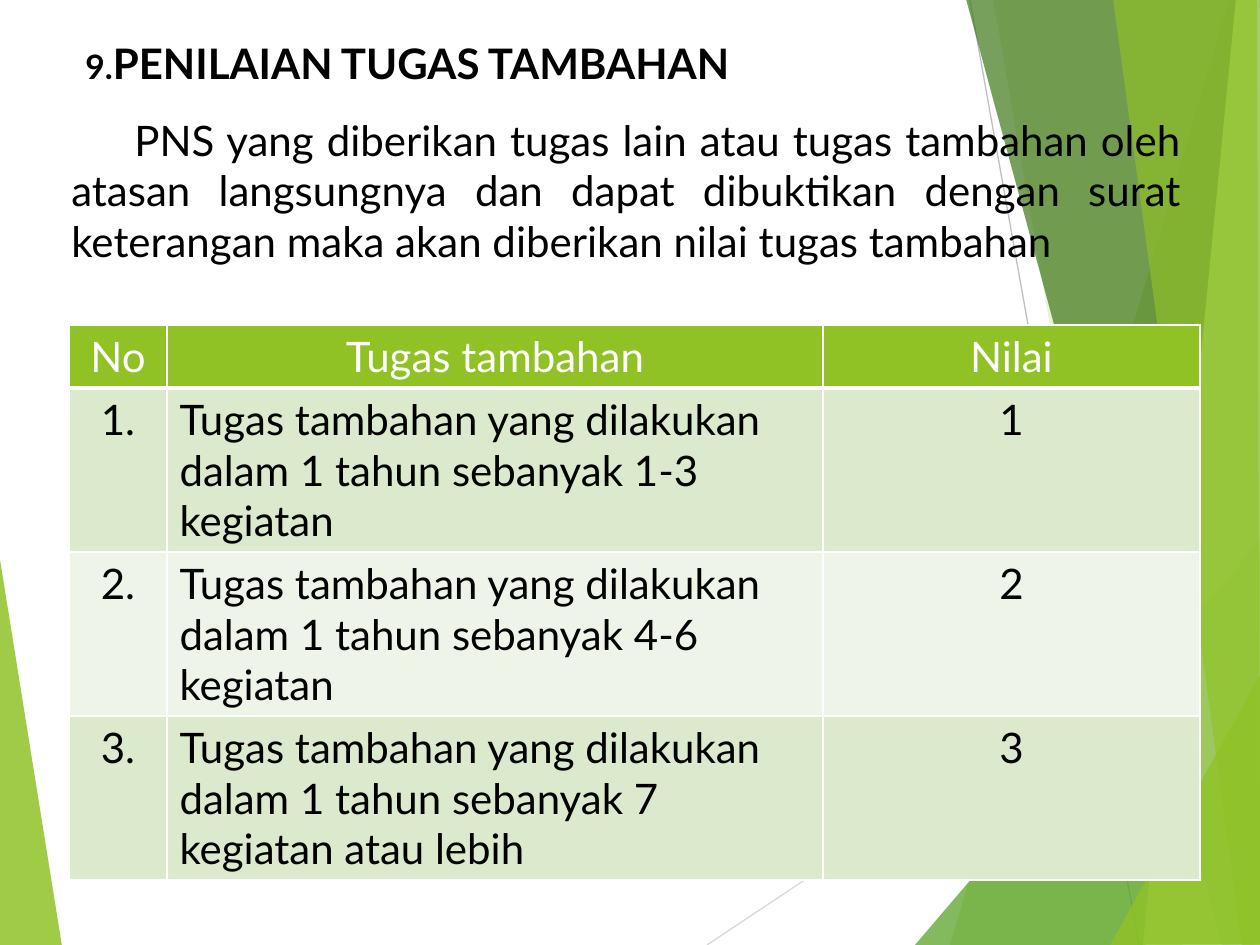
from lxml import etree
from pptx import Presentation, util as u
from pptx.dml.color import RGBColor
from pptx.enum import shapes, text
from pptx.oxml.ns import qn

PX = 914400 / 126  # EMU in one px
FONT = "Lato"


def px(length):
    return u.Emu(round(length * PX))


def paint(color_format, color, alpha=100):
    """Set a colour from a hex string, with opacity in percent."""
    color_format.rgb = RGBColor.from_string(color)
    if alpha < 100:
        node = color_format._xFill.find(qn("a:srgbClr"))
        etree.SubElement(node, qn("a:alpha")).set("val", str(alpha * 1000))


deck = Presentation()
deck.slide_width, deck.slide_height = px(1260), px(945)
page = deck.slides.add_slide(deck.slide_layouts[6])

# Background: thin lines behind the facets
for x1, y1, x2, y2, color in [
    (707, 945, 1261, 576, "D9D9D9"),
    (970, 0, 1139, 945, "BFBFBF"),
]:
    line = page.shapes.add_connector(
        shapes.MSO_CONNECTOR.STRAIGHT, px(x1), px(y1), px(x2), px(y2))
    line.line.width = u.Pt(0.75)
    paint(line.line.color, color)
    etree.SubElement(line._element.spPr, qn("a:effectLst"))

# Background: translucent green facets
facets = [
    ("90C226", 85, [(-1, 553), (62, 946), (-1, 945)]),
    ("90C226", 30, [(1229, 0), (950, 945), (1262, 946), (1261, 1)]),
    ("90C226", 20, [(993, -1), (1158, 945), (1261, 945), (1261, -1)]),
    ("54A021", 72, [(915, 945), (1260, 541), (1261, 945)]),
    ("3F7819", 70, [(966, -1), (1222, 945), (1261, 944), (1261, -1)]),
    ("C0E474", 70, [(1236, -1), (1143, 945), (1261, 945), (1260, -1)]),
    ("90C226", 65, [(1113, -1), (1242, 945), (1260, 945), (1257, -1)]),
    ("90C226", 80, [(1110, 945), (1261, 674), (1261, 944)]),
]
for color, alpha, points in facets:
    builder = page.shapes.build_freeform(*points[0], scale=PX)
    builder.add_line_segments(points[1:], close=True)
    facet = builder.convert_to_shape()
    facet.shadow.inherit = False
    facet.line.fill.background()
    facet.fill.solid()
    paint(facet.fill.fore_color, color, alpha)

# Title and introduction
paragraphs = []
for left, top, width, height, words in [
    (73, 31, 1155, 87, "9.PENILAIAN TUGAS TAMBAHAN"),
    (59, 108, 1134, 231,
     "\tPNS yang diberikan tugas lain atau tugas tambahan oleh atasan "
     "langsungnya dan dapat dibuktikan dengan surat keterangan maka akan "
     "diberikan nilai tugas tambahan"),
]:
    box = page.shapes.add_textbox(px(left), px(top), px(width), px(height))
    box.text_frame.word_wrap = True
    box.text_frame.text = words
    para = box.text_frame.paragraphs[0]
    span = para.runs[0]
    span.font.name, span.font.size = FONT, u.Pt(24)
    paint(span.font.color, "000000")
    paragraphs.append(para)

title, intro = paragraphs
title.runs[0].font.bold = True
title.runs[0].font._element.set("cap", "small")
intro.alignment = text.PP_ALIGN.JUSTIFY
intro.space_before = u.Pt(6)

# Table of marks
task = "Tugas tambahan yang dilakukan dalam 1 tahun sebanyak "
rows = [
    ("No", "Tugas tambahan", "Nilai"),
    ("1.", task + "1-3 kegiatan", "1"),
    ("2.", task + "4-6 kegiatan", "2"),
    ("3.", task + "7 kegiatan atau lebih", "3"),
]
widths, heights = [98, 656, 377], [63, 164, 164, 164]
table = page.shapes.add_table(
    len(rows), len(widths), px(69), px(325), px(sum(widths)), px(sum(heights))).table
for column, width in zip(table.columns, widths):
    column.width = px(width)
for row, height in zip(table.rows, heights):
    row.height = px(height)

for r, words in enumerate(rows):
    for c, word in enumerate(words):
        cell = table.cell(r, c)
        cell.text_frame.text = word
        para = cell.text_frame.paragraphs[0]
        centred = r == 0 or c != 1
        para.alignment = text.PP_ALIGN.CENTER if centred else text.PP_ALIGN.LEFT
        font = para.runs[0].font
        font.name, font.size, font.bold = FONT, u.Pt(24), False
        paint(font.color, "000000" if r else "FFFFFF")

        # White borders come before the fill in the cell properties
        properties = cell._tc.get_or_add_tcPr()
        for side in ("lnL", "lnR", "lnT", "lnB"):
            thick = (r, side) in [(0, "lnB"), (1, "lnT")]
            border = etree.SubElement(
                properties, qn("a:" + side), w=str(u.Pt(3 if thick else 1)))
            fill = etree.SubElement(border, qn("a:solidFill"))
            etree.SubElement(fill, qn("a:srgbClr"), val="FFFFFF")
        cell.fill.solid()
        band = "DBE9CD" if r % 2 else "EEF4E8"
        paint(cell.fill.fore_color, band if r else "90C226")

deck.save("out.pptx")
